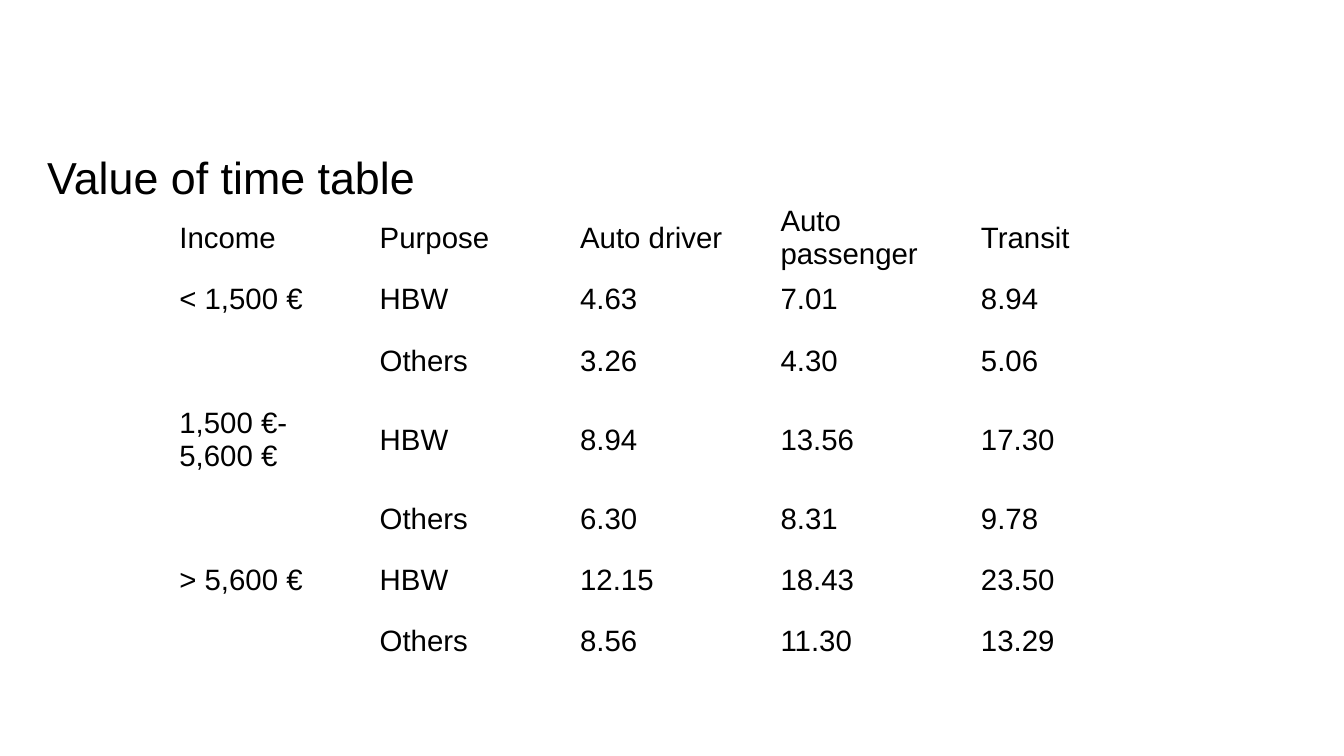
"""Build the value of time slide with its title and income table."""
from dataclasses import dataclass
from typing import NamedTuple

from pptx import Presentation
from pptx.dml.color import RGBColor
from pptx.enum.text import MSO_ANCHOR as Anchor
from pptx.slide import Slide
from pptx.table import _Cell as Cell
from pptx.text.text import _Paragraph as Paragraph
from pptx.util import Cm, Pt


@dataclass(frozen=True)
class Theme:
    font: str = "Arial"
    ink: RGBColor = RGBColor(0x00, 0x00, 0x00)
    title_size: Pt = Pt(32)
    title_leading: Pt = Pt(42.7)
    table_size: Pt = Pt(21)


class TimeValue(NamedTuple):
    income: str
    purpose: str
    driver: str
    passenger: str
    transit: str


THEME = Theme()
TALL, SHORT = Cm(1.98), Cm(1.09)
COLUMN_WIDTH = Cm(5.05)
ROW_HEIGHTS = [TALL, SHORT, TALL, TALL, TALL, SHORT, TALL]
TIME_VALUES = [
    TimeValue("Income", "Purpose", "Auto driver", "Auto passenger", "Transit"),
    TimeValue("< 1,500 €", "HBW", "4.63", "7.01", "8.94"),
    TimeValue("", "Others", "3.26", "4.30", "5.06"),
    TimeValue("1,500 €- 5,600 €", "HBW", "8.94", "13.56", "17.30"),
    TimeValue("", "Others", "6.30", "8.31", "9.78"),
    TimeValue("> 5,600 €", "HBW", "12.15", "18.43", "23.50"),
    TimeValue("", "Others", "8.56", "11.30", "13.29"),
]


def add_span(para: Paragraph, text: str, size: Pt) -> None:
    span = para.add_run()
    span.text = text
    span.font.name = THEME.font
    span.font.size = size
    span.font.bold = False
    span.font.color.rgb = THEME.ink


def add_title(page: Slide, text: str) -> None:
    box = page.shapes.add_textbox(Cm(1.19), Cm(3.61), Cm(31.52), Cm(1.42))
    frame = box.text_frame
    frame.word_wrap = True
    frame.vertical_anchor = Anchor.TOP
    frame.margin_left = frame.margin_right = Cm(0)
    frame.margin_top = frame.margin_bottom = Cm(0)
    para = frame.paragraphs[0]
    para.line_spacing = THEME.title_leading
    add_span(para, text, THEME.title_size)


def fill_cell(cell: Cell, text: str) -> None:
    cell.fill.background()
    cell.vertical_anchor = Anchor.MIDDLE
    cell.margin_left = cell.margin_right = Cm(0.23)
    cell.margin_top = cell.margin_bottom = Cm(0.11)
    if text:
        add_span(cell.text_frame.paragraphs[0], text, THEME.table_size)


def add_time_table(page: Slide, values: list[TimeValue]) -> None:
    column_count = len(TimeValue._fields)
    table = page.shapes.add_table(
        len(values), column_count, Cm(4.29), Cm(5),
        COLUMN_WIDTH * column_count, sum(ROW_HEIGHTS),
    ).table
    table.first_row = table.horz_banding = False
    for column in table.columns:
        column.width = COLUMN_WIDTH
    for row, height, value in zip(table.rows, ROW_HEIGHTS, values):
        row.height = height
        for cell, text in zip(row.cells, value):
            fill_cell(cell, text)


def main() -> None:
    deck = Presentation()
    deck.slide_width, deck.slide_height = Cm(33.87), Cm(19.05)
    page = deck.slides.add_slide(deck.slide_layouts[6])
    add_title(page, "Value of time table")
    add_time_table(page, TIME_VALUES)
    deck.save("out.pptx")


if __name__ == "__main__":
    main()
